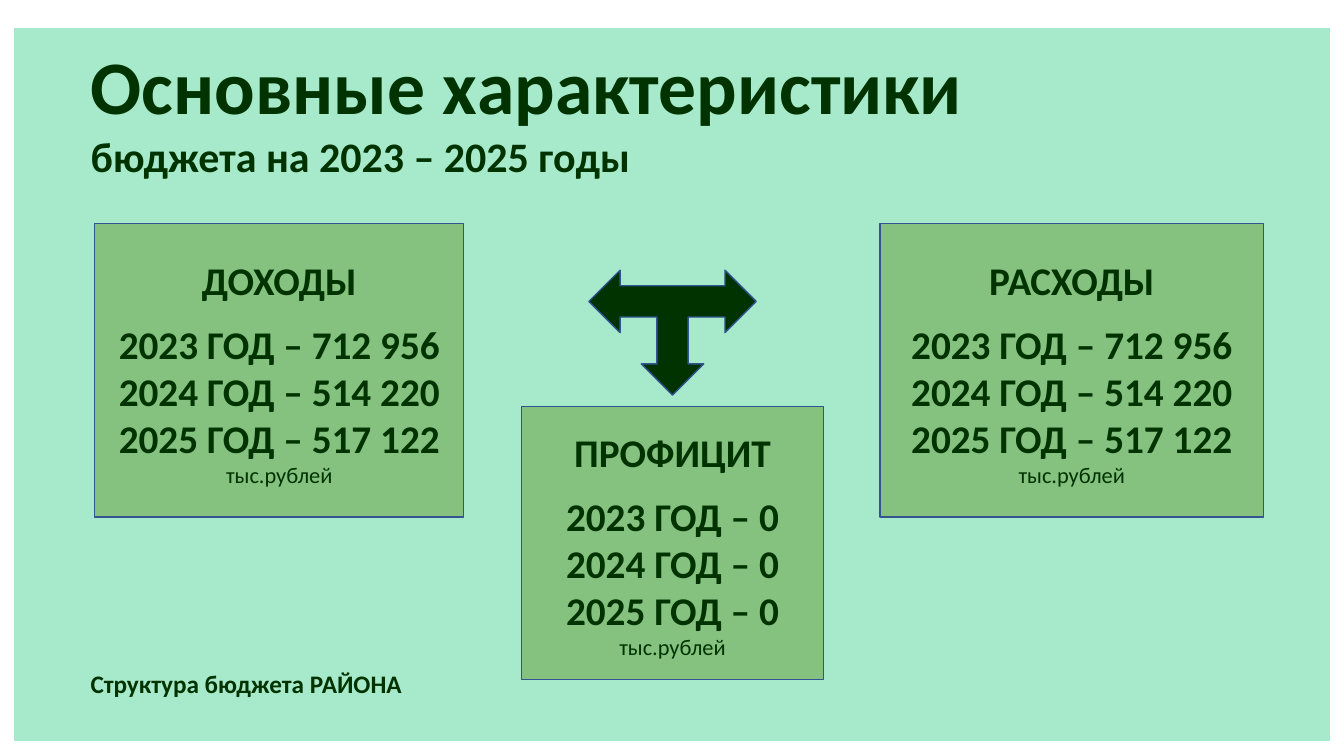
from pptx import Presentation
from pptx.dml.color import RGBColor
from pptx.enum.shapes import MSO_SHAPE as SHAPE
from pptx.enum.text import MSO_ANCHOR as ANCHOR, MSO_AUTO_SIZE as AUTO, PP_ALIGN as ALIGN
from pptx.util import Pt

PX = 9144
FONT = "Calibri"
COLORS = {"panel": "A7EACB", "box": "85C27F", "text": "003300", "line": "325491"}


def emu(*px):
    return [n * PX for n in px]


def color(name):
    return RGBColor.from_string(COLORS[name])


class Deck:
    def __init__(self, width, height):
        self.prs = Presentation()
        self.prs.slide_width, self.prs.slide_height = emu(width, height)
        self.slide = self.prs.slides.add_slide(self.prs.slide_layouts[5])

    def shape(self, kind, at, fill, line=None):
        sp = self.slide.shapes.add_shape(kind, *emu(*at))
        sp.shadow.inherit = False
        sp.fill.solid()
        sp.fill.fore_color.rgb = color(fill)
        if line:
            sp.line.color.rgb = color(line)
            sp.line.width = Pt(1)
        else:
            sp.line.fill.background()
        return sp

    def add_lines(self, tf, lines, align=ALIGN.LEFT):
        tf.word_wrap = True
        for i, (text, size, bold, before) in enumerate(lines):
            p = tf.add_paragraph() if i else tf.paragraphs[0]
            p.alignment = align
            p.space_before = Pt(before)
            r = p.add_run()
            r.text = text
            r.font.name, r.font.size, r.font.bold = FONT, Pt(size), bold
            r.font.color.rgb = color("text")

    def title(self, at, lines):
        sp = self.slide.shapes.title
        sp.left, sp.top, sp.width, sp.height = emu(*at)
        self.slide.shapes._spTree.append(sp._element)
        tf = sp.text_frame
        tf.auto_size = AUTO.NONE
        tf.vertical_anchor = ANCHOR.TOP
        self.add_lines(tf, lines)

    def caption(self, at, text, size):
        sp = self.slide.shapes.add_textbox(*emu(*at))
        self.add_lines(sp.text_frame, [(text, size, True, 0)])

    def budget_box(self, at, heading, amounts):
        tf = self.shape(SHAPE.RECTANGLE, at, "box", "line").text_frame
        tf.vertical_anchor = ANCHOR.MIDDLE
        tf.margin_top, tf.margin_bottom = emu(8, 5)
        lines = [(heading, 28, True, 0)]
        for i, amount in enumerate(amounts):
            lines.append((f"{2023 + i} ГОД – {amount}", 28, True, 0 if i else 12))
        lines.append(("тыс.рублей", 16, False, 0))
        self.add_lines(tf, lines, ALIGN.CENTER)


def main():
    deck = Deck(1333, 750)
    deck.shape(SHAPE.RECTANGLE, (14, 28, 1305, 707), "panel")
    deck.title((80, 34, 1126, 151), [
        ("Основные характеристики", 54, True, 0),
        ("бюджета на 2023 – 2025 годы", 30, True, 0),
    ])
    deck.caption((80, 658, 723, 40), "Структура бюджета РАЙОНА", 18)

    totals = ["712 956", "514 220", "517 122"]
    deck.budget_box((94, 222, 366, 291), "ДОХОДЫ", totals)
    deck.budget_box((873, 222, 380, 291), "РАСХОДЫ", totals)
    arrow = deck.shape(SHAPE.LEFT_RIGHT_UP_ARROW, (584, 268, 166, 124), "text", "line")
    arrow.rotation = 180
    deck.budget_box((517, 403, 300, 271), "ПРОФИЦИТ", ["0"] * 3)
    deck.prs.save("out.pptx")


if __name__ == "__main__":
    main()
